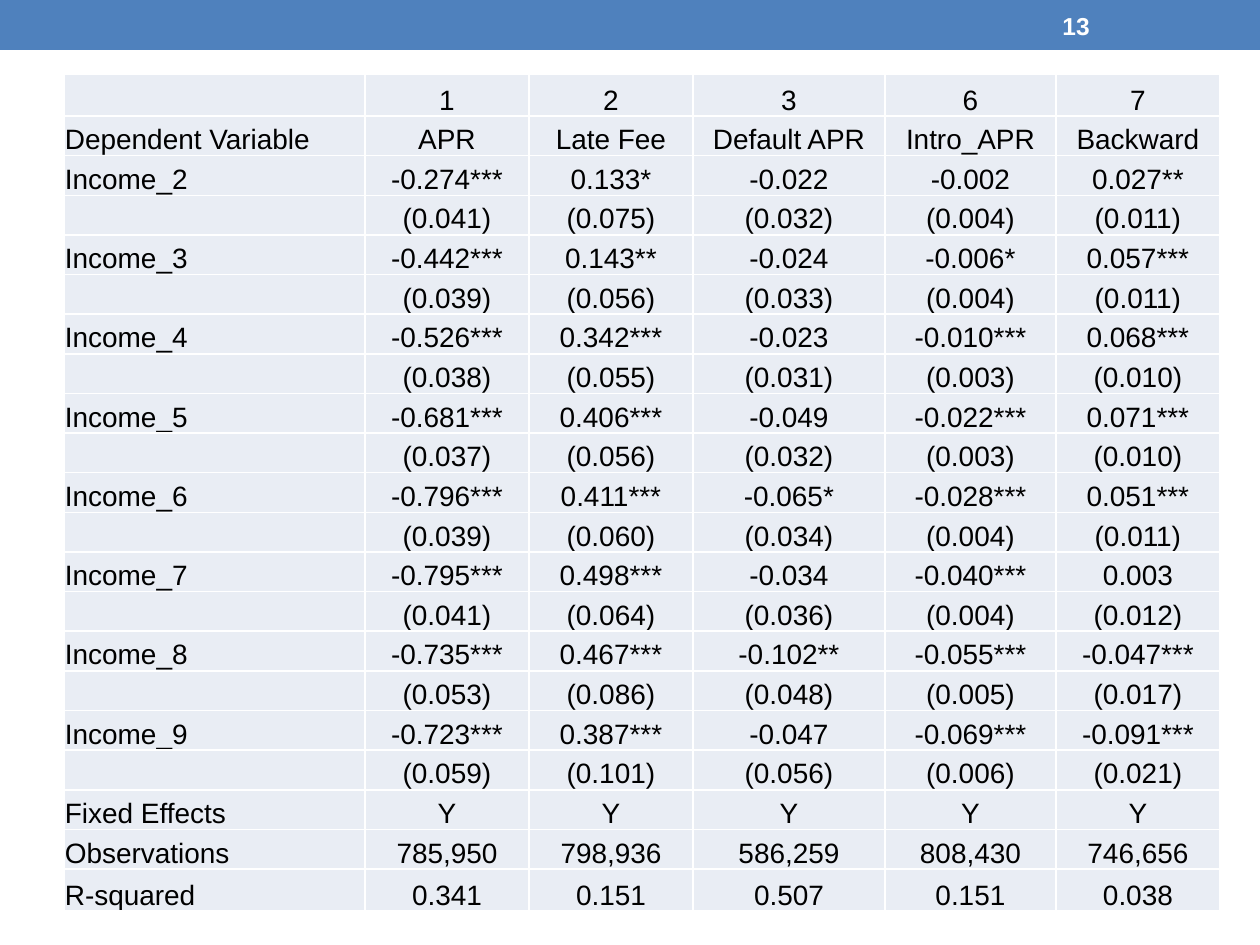
from dataclasses import dataclass

from lxml import etree
from pptx import Presentation
from pptx import util as u
from pptx.dml.color import RGBColor
from pptx.enum import shapes, text
from pptx.oxml.ns import qn


@dataclass(frozen=True)
class Theme:
    font: str = "Arial"
    band: str = "4F81BD"
    cell: str = "E9EDF4"
    ink: str = "000000"
    white: str = "FFFFFF"
    number_size: int = 14
    table_size: int = 16
    border_width: int = 1


THEME = Theme()
PX_PER_INCH = 126
SLIDE_WIDTH, SLIDE_HEIGHT = 1260, 945

COLUMN_WIDTHS = [301, 164, 164, 192, 171, 164]
END_ROW_HEIGHT = 42

HEADINGS = [
    ["", "1", "2", "3", "6", "7"],
    ["Dependent Variable", "APR", "Late Fee", "Default APR", "Intro_APR", "Backward"],
]
# Each income group has its coefficients, then their standard errors.
ESTIMATES = {
    "Income_2": ("-0.274*** 0.133* -0.022 -0.002 0.027**",
                 "0.041 0.075 0.032 0.004 0.011"),
    "Income_3": ("-0.442*** 0.143** -0.024 -0.006* 0.057***",
                 "0.039 0.056 0.033 0.004 0.011"),
    "Income_4": ("-0.526*** 0.342*** -0.023 -0.010*** 0.068***",
                 "0.038 0.055 0.031 0.003 0.010"),
    "Income_5": ("-0.681*** 0.406*** -0.049 -0.022*** 0.071***",
                 "0.037 0.056 0.032 0.003 0.010"),
    "Income_6": ("-0.796*** 0.411*** -0.065* -0.028*** 0.051***",
                 "0.039 0.060 0.034 0.004 0.011"),
    "Income_7": ("-0.795*** 0.498*** -0.034 -0.040*** 0.003",
                 "0.041 0.064 0.036 0.004 0.012"),
    "Income_8": ("-0.735*** 0.467*** -0.102** -0.055*** -0.047***",
                 "0.053 0.086 0.048 0.005 0.017"),
    "Income_9": ("-0.723*** 0.387*** -0.047 -0.069*** -0.091***",
                 "0.059 0.101 0.056 0.006 0.021"),
}
SUMMARY = {
    "Fixed Effects": "Y Y Y Y Y",
    "Observations": "785,950 798,936 586,259 808,430 746,656",
    "R-squared": "0.341 0.151 0.507 0.151 0.038",
}


def px(length):
    return u.Emu(round(length * u.Inches(1) / PX_PER_INCH))


def rgb(colour):
    return RGBColor.from_string(colour)


def style_runs(paragraph, size, colour, bold=False):
    for run in paragraph.runs:
        run.font.name = THEME.font
        run.font.size = u.Pt(size)
        run.font.bold = bold
        run.font.color.rgb = rgb(colour)


def regression_rows():
    rows = list(HEADINGS)
    for group, (coefficients, errors) in ESTIMATES.items():
        rows.append([group, *coefficients.split()])
        rows.append(["", *(f"({error})" for error in errors.split())])
    rows += [[label, *values.split()] for label, values in SUMMARY.items()]
    return rows


def add_header_band(slide, left, top, width, height, number):
    band = slide.shapes.add_shape(shapes.MSO_SHAPE.RECTANGLE,
                                  px(left), px(top), px(width), px(height))
    band.shadow.inherit = False
    band.fill.solid()
    band.fill.fore_color.rgb = rgb(THEME.band)
    band.line.fill.background()

    page = slide.shapes.add_textbox(px(left + width - 210), px(top + 3),
                                    px(147), px(height - 5))
    frame = page.text_frame
    frame.word_wrap = True
    frame.vertical_anchor = text.MSO_ANCHOR.MIDDLE
    frame.text = number
    style_runs(frame.paragraphs[0], THEME.number_size, THEME.white, bold=True)


def add_cell_borders(cell):
    properties = cell._tc.get_or_add_tcPr()
    for side in ("lnL", "lnR", "lnT", "lnB"):
        line = etree.SubElement(properties, qn(f"a:{side}"),
                                w=str(u.Pt(THEME.border_width)))
        fill = etree.SubElement(line, qn("a:solidFill"))
        etree.SubElement(fill, qn("a:srgbClr"), val=THEME.white)


def fill_cell(cell, value, alignment):
    add_cell_borders(cell)
    cell.fill.solid()
    cell.fill.fore_color.rgb = rgb(THEME.cell)
    cell.margin_left = cell.margin_right = cell.margin_top = px(1)
    cell.margin_bottom = 0
    cell.vertical_anchor = text.MSO_ANCHOR.BOTTOM
    cell.text_frame.text = value
    paragraph = cell.text_frame.paragraphs[0]
    paragraph.alignment = alignment
    style_runs(paragraph, THEME.table_size, THEME.ink)


def add_regression_table(slide, left, top, height):
    """Place the table; the first and last rows are taller, the rest equal."""
    rows = regression_rows()
    table = slide.shapes.add_table(len(rows), len(COLUMN_WIDTHS), px(left), px(top),
                                   px(sum(COLUMN_WIDTHS)), px(height)).table
    table.first_row = table.horz_banding = False
    for column, width in zip(table.columns, COLUMN_WIDTHS):
        column.width = px(width)

    inner_height = (height - 2 * END_ROW_HEIGHT) / (len(rows) - 2)
    for i, values in enumerate(rows):
        is_end = i in (0, len(rows) - 1)
        table.rows[i].height = px(END_ROW_HEIGHT if is_end else inner_height)
        for j, value in enumerate(values):
            alignment = text.PP_ALIGN.CENTER if j else text.PP_ALIGN.LEFT
            fill_cell(table.cell(i, j), value, alignment)


def main():
    deck = Presentation()
    deck.slide_width, deck.slide_height = px(SLIDE_WIDTH), px(SLIDE_HEIGHT)
    slide = deck.slides.add_slide(deck.slide_layouts[6])
    add_header_band(slide, 0, 0, SLIDE_WIDTH, 50, "13")
    add_regression_table(slide, 64, 74, 838)
    deck.save("out.pptx")


if __name__ == "__main__":
    main()
